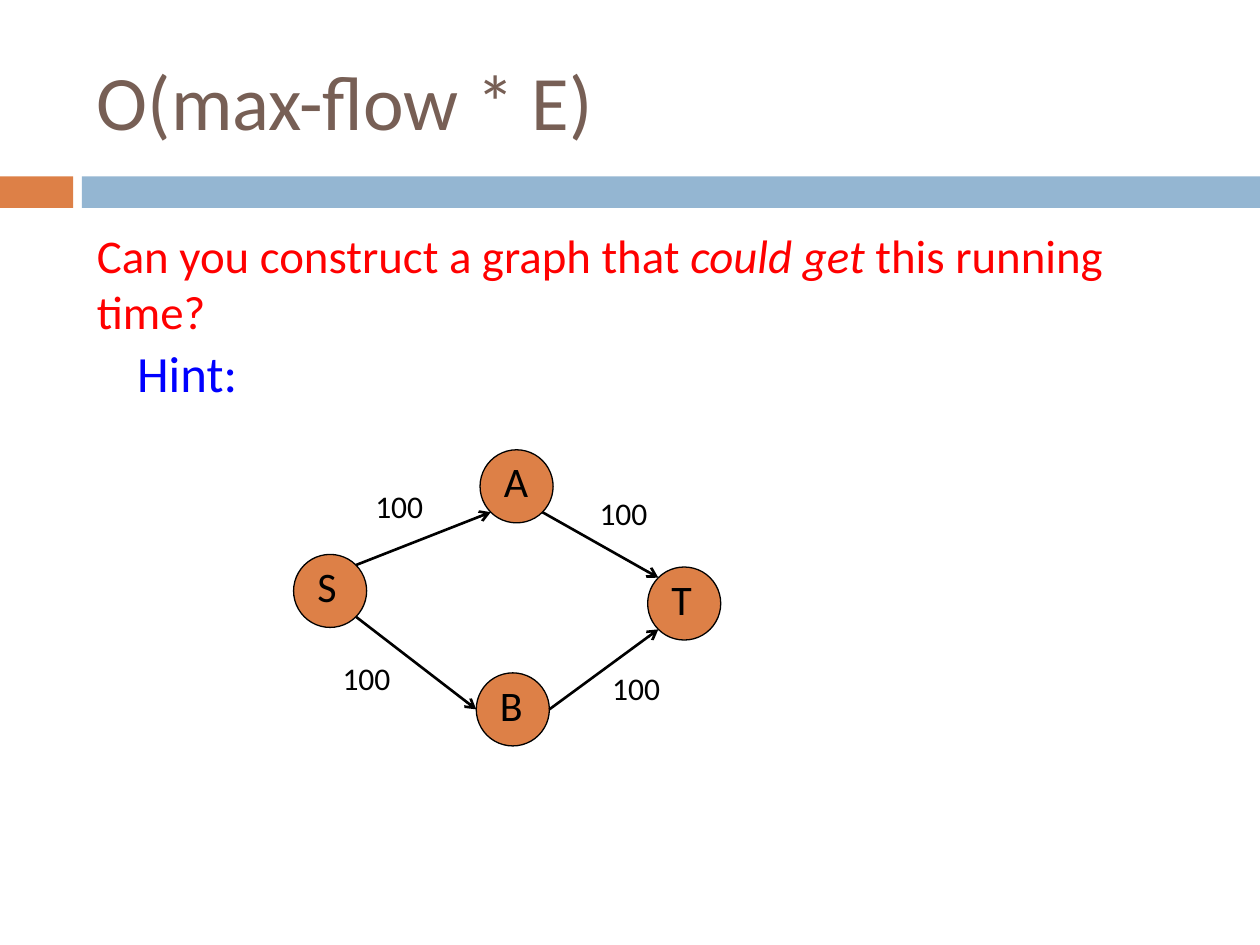
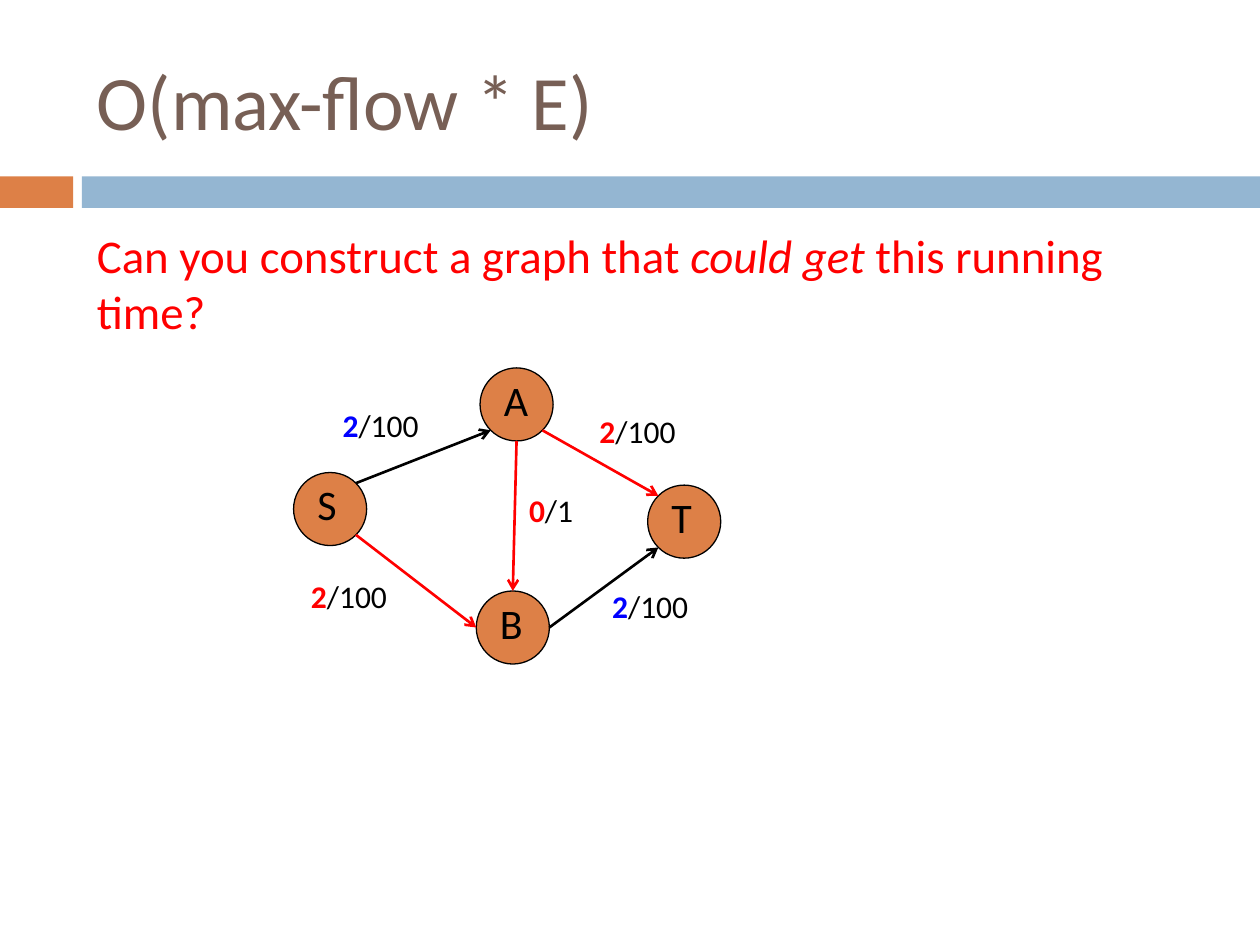
from dataclasses import dataclass
from math import cos, radians, sin

from lxml.etree import SubElement
from pptx import Presentation
from pptx.dml.color import RGBColor
from pptx.enum.shapes import MSO_CONNECTOR, MSO_SHAPE
from pptx.enum.text import MSO_ANCHOR
from pptx.oxml.ns import qn
from pptx.util import Inches, Pt


@dataclass(frozen=True)
class Theme:
    font: str = "Calibri"
    orange: str = "DD8047"
    band_blue: str = "94B6D2"
    brown: str = "775F55"
    black: str = "000000"
    red: str = "FF0000"
    blue: str = "0000FF"
    title_size: float = 44
    question_size: float = 26.8
    hint_size: float = 29
    node_size: float = 24
    label_size: float = 18


theme = Theme()


def add_text(shapes, box, size, runs, anchor=MSO_ANCHOR.TOP):
    """Add a one-paragraph text box; each run is (text, colour, font style or None)."""
    text_box = shapes.add_textbox(*map(Inches, box))
    text_frame = text_box.text_frame
    text_frame.word_wrap = True
    text_frame.vertical_anchor = anchor
    for text, color, style in runs:
        run = text_frame.paragraphs[0].add_run()
        run.text = text
        run.font.name = theme.font
        run.font.size = Pt(size)
        run.font.color.rgb = RGBColor.from_string(color)
        run.font.bold = style == "bold"
        run.font.italic = style == "italic"


def add_filled_shape(shapes, preset, box, color):
    shape = shapes.add_shape(preset, *map(Inches, box))
    shape.shadow.inherit = False
    shape.fill.solid()
    shape.fill.fore_color.rgb = RGBColor.from_string(color)
    shape.line.fill.background()
    return shape


BANDS = [((0, 1.4, 0.58, 0.25), theme.orange), ((0.65, 1.4, 9.35, 0.25), theme.band_blue)]
QUESTION = [
    ("Can you construct a graph that ", theme.red, None),
    ("could get", theme.red, "italic"),
    (" this running time?", theme.red, None),
]

# Node corners and label positions are relative to the top of the graph.
DIAMETER = 0.58
NODES = {"S": (2.33, 0.83), "A": (3.81, 0), "B": (3.78, 1.77), "T": (5.14, 0.93)}
# Angles on the circles run clockwise from the right.
EDGE_ANGLES = {"SA": (-45, 135), "SB": (45, 180), "BT": (0, 135), "AT": (45, 225), "AB": (90, 270)}
LABEL_TOPS = {"SA": 0.25, "SB": 1.61, "BT": 1.69, "AT": 0.3, "AB": 0.93}

# Each edge: label left, label width, flow, capacity, flow colour, line colour
GRAPHS = [
    {
        "top": 3.57,
        "hint": "Hint:",
        "edges": {
            "SA": (2.88, 0.75, "", "100", theme.black, theme.black),
            "SB": (2.62, 0.75, "", "100", theme.black, theme.black),
            "BT": (4.76, 0.75, "", "100", theme.black, theme.black),
            "AT": (4.66, 0.75, "", "100", theme.black, theme.black),
        },
    },
    {
        "top": 2.92,
        "hint": "",
        "edges": {
            "SA": (2.62, 1.01, "2", "/100", theme.blue, theme.black),
            "SB": (2.37, 1.16, "2", "/100", theme.red, theme.red),
            "BT": (4.76, 1.09, "2", "/100", theme.blue, theme.black),
            "AT": (4.66, 1.07, "2", "/100", theme.red, theme.red),
            "AB": (4.1, 0.75, "0", "/1", theme.red, theme.red),
        },
    },
]

presentation = Presentation()
presentation.slide_width = Inches(10)
presentation.slide_height = Inches(7.5)

for graph in GRAPHS:
    slide = presentation.slides.add_slide(presentation.slide_layouts[6])
    shapes = slide.shapes
    top = graph["top"]

    for box, color in BANDS:
        add_filled_shape(shapes, MSO_SHAPE.RECTANGLE, box, color)
    add_text(shapes, (0.67, 0.25, 8.92, 1.08), theme.title_size,
             [("O(max-flow * E)", theme.brown, None)], MSO_ANCHOR.MIDDLE)
    add_text(shapes, (0.67, 1.75, 8.92, 0.7), theme.question_size, QUESTION)

    for name, (left, offset) in NODES.items():
        node = shapes.add_group_shape()
        circle = add_filled_shape(node.shapes, MSO_SHAPE.OVAL,
                                  (left, top + offset, DIAMETER, DIAMETER), theme.orange)
        circle.line.color.rgb = RGBColor.from_string(theme.black)
        circle.line.width = Pt(0.75)
        add_text(node.shapes, (left + 0.09, top + offset, 0.5, 0.5), theme.node_size,
                 [(name, theme.black, None)])

    for edge, (_, _, _, _, _, line_color) in graph["edges"].items():
        ends = []
        for name, angle in zip(edge, EDGE_ANGLES[edge]):
            left, offset = NODES[name]
            radius = DIAMETER / 2
            ends.append(Inches(left + radius + radius * cos(radians(angle))))
            ends.append(Inches(top + offset + radius + radius * sin(radians(angle))))
        arrow = shapes.add_connector(MSO_CONNECTOR.STRAIGHT, *ends)
        arrow.line.color.rgb = RGBColor.from_string(line_color)
        arrow.line.width = Pt(1.5)
        SubElement(arrow.line._get_or_add_ln(), qn("a:tailEnd"), type="arrow")
        SubElement(arrow._element.spPr, qn("a:effectLst"))

    for edge, (left, width, flow, capacity, flow_color, _) in graph["edges"].items():
        runs = [(capacity, theme.black, None)]
        if flow:
            runs.insert(0, (flow, flow_color, "bold"))
        add_text(shapes, (left, top + LABEL_TOPS[edge], width, 0.4), theme.label_size, runs)

    if graph["hint"]:
        add_text(shapes, (0.99, 2.66, 1.17, 0.7), theme.hint_size,
                 [(graph["hint"], theme.blue, None)])

presentation.save("out.pptx")
